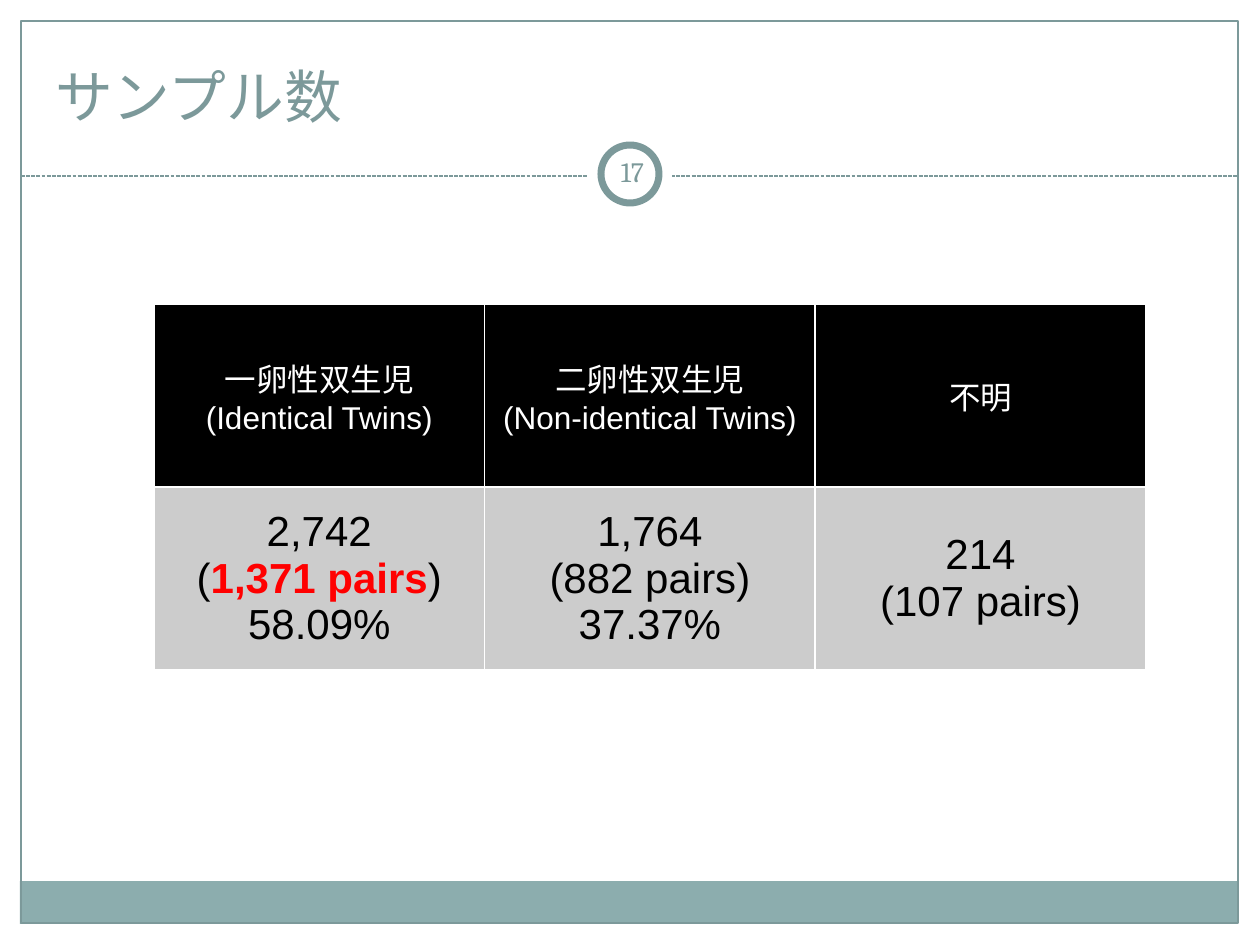
from lxml import etree
from pptx import Presentation
from pptx.dml.color import RGBColor
from pptx.enum.dml import MSO_LINE
from pptx.enum.shapes import MSO_CONNECTOR, MSO_SHAPE
from pptx.enum.text import MSO_ANCHOR, PP_ALIGN
from pptx.oxml.ns import qn
from pptx.util import Emu, Pt

RECTANGLE, OVAL = MSO_SHAPE.RECTANGLE, MSO_SHAPE.OVAL
STRAIGHT = MSO_CONNECTOR.STRAIGHT
DASH = MSO_LINE.SQUARE_DOT
MIDDLE, BOTTOM = MSO_ANCHOR.MIDDLE, MSO_ANCHOR.BOTTOM
LEFT, CENTER = PP_ALIGN.LEFT, PP_ALIGN.CENTER

SCALE = 914400 / 126  # EMU per px
COLORS = {
    "white": "FFFFFF", "black": "000000", "teal": "7C999A",
    "band": "8CADAE", "gray": "CCCCCC", "red": "FF0000",
}


def px(*lengths):
    return [Emu(round(length * SCALE)) for length in lengths]


def write(frame, lines, font, size, color, align):
    """Each line is a list of runs: (text, highlighted)."""
    for index, line in enumerate(lines):
        paragraph = frame.paragraphs[0] if index == 0 else frame.add_paragraph()
        paragraph.alignment = align
        for text, highlighted in line:
            run = paragraph.add_run()
            run.text = text
            run.font.name = font
            run.font.size = Pt(size)
            run.font.bold = highlighted
            run.font.color.rgb = RGBColor.from_string(COLORS["red" if highlighted else color])


presentation = Presentation()
presentation.slide_width, presentation.slide_height = px(1260, 945)
slide = presentation.slides.add_slide(presentation.slide_layouts[6])

# Footer band, frame, dashed divider and number badge, from back to front
parts = [
    (RECTANGLE, (20, 881, 1217, 43), "band", None),
    (RECTANGLE, (21, 21, 1217, 902), None, 0.75),
    (None, (21, 176, 1238, 176), None, 0.75),
    (OVAL, (588, 132, 84, 84), "white", None),
    (OVAL, (601, 145, 58, 58), "white", 4),
]
for kind, box, fill, line_width in parts:
    if kind is None:
        shape = slide.shapes.add_connector(STRAIGHT, *px(*box))
        shape.line.dash_style = DASH
        etree.SubElement(shape._element.spPr, qn("a:effectLst"))
    else:
        shape = slide.shapes.add_shape(kind, *px(*box))
        shape.shadow.inherit = False
        if fill:
            shape.fill.solid()
            shape.fill.fore_color.rgb = RGBColor.from_string(COLORS[fill])
        else:
            shape.fill.background()
    if line_width:
        shape.line.color.rgb = RGBColor.from_string(COLORS["teal"])
        shape.line.width = Pt(line_width)
    else:
        shape.line.fill.background()

# Title and slide number
labels = [
    ("サンプル数", (42, 32, 1176, 104), 33, LEFT, BOTTOM, (13, 6)),
    ("17", (601, 141, 63, 60), 16, CENTER, MIDDLE, (6, 6)),
]
for text, box, size, align, anchor, insets in labels:
    frame = slide.shapes.add_textbox(*px(*box)).text_frame
    frame.word_wrap = True
    frame.vertical_anchor = anchor
    frame.margin_left, frame.margin_top = px(*insets)
    frame.margin_right, frame.margin_bottom = px(*insets)
    write(frame, [[(text, False)]], "Cambria", size, "teal", align)

# Sample table: header row, then counts
rows = [
    (18, "white", "black", [
        [[("一卵性双生児", False)], [("(Identical Twins)", False)]],
        [[("二卵性双生児", False)], [("(Non-identical Twins)", False)]],
        [[("不明", False)]],
    ]),
    (24, "black", "gray", [
        [[("2,742", False)],
         [("(", False), ("1,371 pairs", True), (")", False)],
         [("58.09%", False)]],
        [[("1,764", False)], [("(882 pairs)", False)], [("37.37%", False)]],
        [[("214", False)], [("(107 pairs)", False)]],
    ]),
]
table = slide.shapes.add_table(2, 3, *px(154, 304, 992, 366)).table
for row_index, (size, color, fill, cells) in enumerate(rows):
    for column_index, lines in enumerate(cells):
        cell = table.cell(row_index, column_index)
        cell.vertical_anchor = MIDDLE
        write(cell.text_frame, lines, "Arial", size, color, CENTER)
        # Borders come before the fill in the cell properties
        properties = cell._tc.get_or_add_tcPr()
        for side in ("a:lnL", "a:lnR", "a:lnT", "a:lnB"):
            border = etree.SubElement(properties, qn(side), w=str(Pt(1)))
            solid = etree.SubElement(border, qn("a:solidFill"))
            etree.SubElement(solid, qn("a:srgbClr"), val=COLORS["white"])
        cell.fill.solid()
        cell.fill.fore_color.rgb = RGBColor.from_string(COLORS[fill])

presentation.save("out.pptx")
